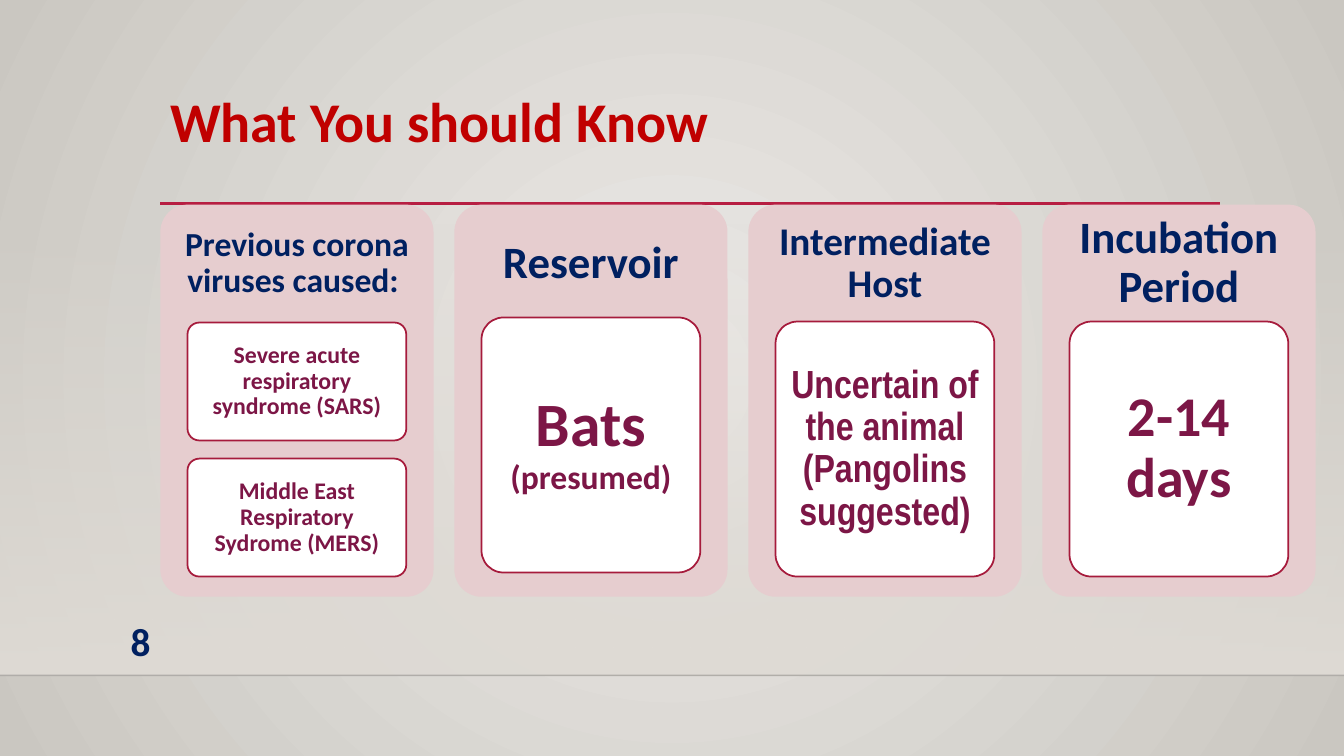
from lxml import etree
from pptx import Presentation
from pptx.dml import color
from pptx.enum import shapes, text
from pptx.oxml import ns, parse_xml
from pptx.util import Inches, Pt

NAVY, PLUM, RED = "002060", "7C1646", "C00000"
PINK, WINE, WHITE = "E6CDCF", "A61B3C", "FFFFFF"
LEFT, TOP, STEP, WIDE, TALL = 1.59, 2.03, 2.916, 2.71, 3.89
HEAD, INSET, INNER = 1.17, 0.27, 2.17

CARDS = [
    ("Previous corona viruses caused: ", 24, 0.1, 1.17, [
        (0, 1.17, [("Severe acute respiratory syndrome (SARS)", 17)], "Calibri", (0.05, 0.04)),
        (1.35, 1.17, [("Middle East Respiratory Sydrome (MERS)", 17)], "Calibri", (0.05, 0.04))]),
    ("Reservoir", 32, 0.13, 1.12, [
        (0, 2.53, [("Bats ", 44), ("(presumed)", 24)], "Calibri", (0.12, 0.09))]),
    ("Intermediate Host", 28, 0.12, 1.16, [
        (0, 2.53, [("Uncertain of the animal (Pangolins suggested)", 28)], "Arial Narrow", (0.08, 0.06))]),
    ("Incubation Period", 32, 0.13, 1.16, [
        (0, 2.53, [("2-14 days", 40)], "Calibri", (0.11, 0.08))]),
]


def rgb(code):
    return color.RGBColor.from_string(code)


def blend(old, stops, shade):
    marks = "".join(
        f'<a:gs pos="{pos * 1000}"><a:srgbClr val="{code}">'
        f'<a:alpha val="{alpha * 1000}"/></a:srgbClr></a:gs>'
        for pos, code, alpha in stops)
    new = parse_xml(f'<a:gradFill {ns.nsdecls("a")} rotWithShape="1">'
                    f'<a:gsLst>{marks}</a:gsLst>{shade}</a:gradFill>')
    old.getparent().replace(old, new)


def backdrop(slide):
    slide.background.fill.gradient()
    blend(slide.element.find(".//" + ns.qn("a:gradFill")),
          [(0, "ECEAE7", 100), (100, "CAC7C1", 100)],
          '<a:path path="circle"><a:fillToRect l="50000" t="50000" r="50000" b="50000"/></a:path>')
    band = box(slide, (0, 2.21, 13.33, 4.49), WHITE, kind=shapes.MSO_SHAPE.RECTANGLE)
    band.fill.gradient()
    blend(band._element.spPr.find(ns.qn("a:gradFill")),
          [(0, "DFDBD5", 0), (100, "DFDBD5", 100)], '<a:lin ang="5400000" scaled="0"/>')


def box(slide, area, fill, edge=None, kind=shapes.MSO_SHAPE.ROUNDED_RECTANGLE):
    shape = slide.shapes.add_shape(kind, *map(Inches, area))
    shape.shadow.inherit = False
    shape.fill.solid()
    shape.fill.fore_color.rgb = rgb(fill)
    if kind == shapes.MSO_SHAPE.ROUNDED_RECTANGLE:
        shape.adjustments[0] = 0.1
    if edge:
        shape.line.color.rgb = rgb(edge)
        shape.line.width = Pt(1.25)
    else:
        shape.line.fill.background()
    return shape


def rule(slide, start, end, y, code, width, alpha=100):
    line = slide.shapes.add_connector(
        shapes.MSO_CONNECTOR.STRAIGHT, Inches(start), Inches(y), Inches(end), Inches(y))
    line.line.color.rgb = rgb(code)
    line.line.width = Pt(width)
    props = line._element.spPr
    if alpha < 100:
        tint = props.find(".//" + ns.qn("a:srgbClr"))
        etree.SubElement(tint, ns.qn("a:alpha"), val=str(alpha * 1000))
    etree.SubElement(props, ns.qn("a:effectLst"))


def write(slide, area, runs, code, font="Calibri", align=text.PP_ALIGN.CENTER,
          anchor=text.MSO_ANCHOR.MIDDLE, pad=(0.1, 0.05), space=0.9):
    frame = slide.shapes.add_textbox(*map(Inches, area)).text_frame
    frame.word_wrap = True
    frame.vertical_anchor = anchor
    frame.margin_left = frame.margin_right = Inches(pad[0])
    frame.margin_top = frame.margin_bottom = Inches(pad[1])
    para = frame.paragraphs[0]
    para.alignment = align
    para.line_spacing = space
    for words, size in runs:
        run = para.add_run()
        run.text = words
        run.font.name = font
        run.font.size = Pt(size)
        run.font.bold = True
        run.font.color.rgb = rgb(code)


def card(slide, x, title, size, pad, drop, items):
    box(slide, (x, TOP, WIDE, TALL), PINK)
    write(slide, (x, TOP, WIDE, HEAD), [(title, size)], NAVY, pad=(pad, pad))
    for down, tall, runs, font, inner in items:
        left, top = x + INSET, TOP + drop + down
        gap = tall * 0.03 if tall < 2 else 0.065
        box(slide, (left, top, INNER, tall), WHITE, WINE)
        write(slide, (left + gap, top + gap, INNER - 2 * gap, tall - 2 * gap),
              runs, PLUM, font=font, pad=inner)


def main():
    deck = Presentation()
    deck.slide_width, deck.slide_height = Inches(13.33), Inches(7.5)
    slide = deck.slides.add_slide(deck.slide_layouts[6])
    backdrop(slide)
    rule(slide, 0, 13.33, 6.7, "000001", 1, alpha=20)
    rule(slide, LEFT, 12.1, 2.02, "B71E42", 2.5)
    write(slide, (LEFT, 0.88, 10.5, 1.15), [("What You should Know", 40)], RED,
          align=text.PP_ALIGN.LEFT, anchor=text.MSO_ANCHOR.TOP)
    for col, info in enumerate(CARDS):
        card(slide, LEFT + col * STEP, *info)
    write(slide, (0.7, 6.07, 0.89, 0.55), [("8", 28)], NAVY,
          align=text.PP_ALIGN.RIGHT, anchor=text.MSO_ANCHOR.TOP, space=1)
    deck.save("out.pptx")


if __name__ == "__main__":
    main()
